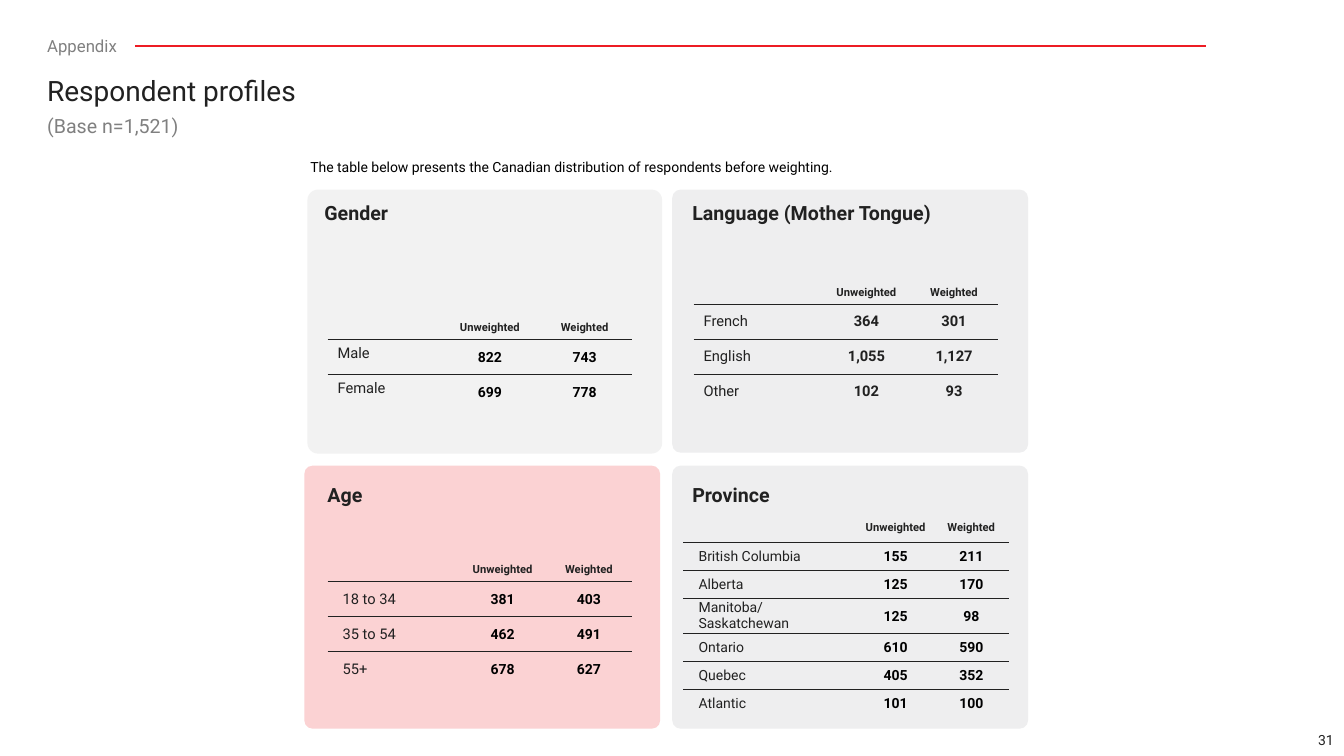
import pptx
import pptx.util
import pptx.dml.color
import pptx.enum.shapes
import pptx.enum.text
import pptx.oxml
import pptx.oxml.ns

Pt = pptx.util.Pt
Rgb = pptx.dml.color.RGBColor.from_string
Align = pptx.enum.text.PP_ALIGN
Anchor = pptx.enum.text.MSO_ANCHOR
Shape = pptx.enum.shapes.MSO_SHAPE


class Theme:
    font = "Roboto"
    ink, black, gray, white = "212121", "000000", "808080", "FFFFFF"
    red, pink, pale, mist = "ED1C24", "FBD2D3", "F2F2F2", "EEEEEF"
    title, head, tag, label, body, small = 20, 14, 12, 10.5, 10, 8


def write(frame, text, size=Theme.body, color=Theme.ink, bold=False,
          align=Align.LEFT, space=None):
    para = frame.paragraphs[0]
    para.alignment = align
    para.line_spacing = space
    run = para.add_run()
    run.text = text
    run.font.name = Theme.font
    run.font.size = Pt(size)
    run.font.bold = bold
    run.font.color.rgb = Rgb(color)


def edge(cell, side, drawn):
    fill = f'<a:solidFill><a:srgbClr val="{Theme.ink}"/></a:solidFill>' if drawn else "<a:noFill/>"
    space = pptx.oxml.ns.nsdecls("a")
    line = pptx.oxml.parse_xml(f'<a:{side} {space} w="{Pt(0.5)}">{fill}</a:{side}>')
    cell._tc.get_or_add_tcPr().append(line)


deck = pptx.Presentation()
deck.slide_width, deck.slide_height = Pt(960), Pt(540)
slide = deck.slides.add_slide(deck.slide_layouts[6])
shapes = slide.shapes

rule = shapes.add_connector(pptx.enum.shapes.MSO_CONNECTOR.STRAIGHT,
                            Pt(64.8), Pt(33.1), Pt(861.1), Pt(33.1))
rule.line.color.rgb = Rgb(Theme.red)
rule.line.width = Pt(1.5)
rule._element.spPr.append(pptx.oxml.parse_xml(f'<a:effectLst {pptx.oxml.ns.nsdecls("a")}/>'))

cards = [
    (219.6, 135.4, 253.4, 188.6, 0.04, Theme.pale),
    (480.2, 135.4, 254.2, 187.9, 0.032, Theme.mist),
    (217.4, 332.6, 254.2, 187.9, 0.032, Theme.pink),
    (480.2, 332.6, 254.2, 187.9, 0.032, Theme.mist),
]
for left, top, width, height, curve, color in cards:
    card = shapes.add_shape(Shape.ROUNDED_RECTANGLE, Pt(left), Pt(top), Pt(width), Pt(height))
    card.adjustments[0] = curve
    card.shadow.inherit = False
    card.fill.solid()
    card.fill.fore_color.rgb = Rgb(color)
    card.line.fill.background()

head = dict(size=Theme.head, bold=True)
labels = [
    ("Appendix", 26.6, 23.8, 69.8, 20.2, dict(size=Theme.tag, color=Theme.gray, space=0.9)),
    ("Respondent profiles", 26.6, 51.8, 688.3, 28.1, dict(size=Theme.title, space=0.9)),
    ("(Base n=1,521)", 26.6, 79.9, 453.6, 28.1, dict(size=Theme.head, color=Theme.gray, space=0.9)),
    ("Gender", 224.6, 139.7, 67.7, 24.5, head),
    ("Language (Mother Tongue)", 487.4, 139.7, 200.9, 24.5, head),
    ("Age", 226.8, 341.3, 92.9, 24.5, head),
    ("Province", 487.4, 341.3, 92.9, 24.5, head),
    ("The table below presents the Canadian distribution of respondents before weighting.",
     217.4, 110.9, 520.6, 15.8, dict(color=Theme.black, align=Align.JUSTIFY)),
    ("31", 870.5, 517, 89.3, 23, dict(align=Align.RIGHT)),
]
for text, left, top, width, height, style in labels:
    box = shapes.add_textbox(Pt(left), Pt(top), Pt(width), Pt(height))
    frame = box.text_frame
    frame.word_wrap = True
    if text == "Appendix":
        box.fill.solid()
        box.fill.fore_color.rgb = Rgb(Theme.white)
    if text == "31":
        frame.vertical_anchor = Anchor.MIDDLE
    if style.get("align") == Align.JUSTIFY:
        frame.margin_left = frame.margin_right = Pt(4.3)
        frame.margin_top = frame.margin_bottom = Pt(2.2)
    write(frame, text, **style)

wide = (7.2, 3.6, 7.2, 3.6)
tight = (0.7, 0.7, 0.7, 0)
inset = (10.8, 0.7, 5, 0.7)
none = (0, 0, 0, 0)
bold = dict(bold=True, align=Align.CENTER)
small = dict(bold, size=Theme.small)
name = dict(size=Theme.label)
count = dict(bold, color=Theme.black)
mid, low, high = Anchor.MIDDLE, Anchor.BOTTOM, Anchor.TOP

tables = [
    (234, 213.8, (82.1, 67.7), [25] * 2,
     (small, wide, low), (name, wide, high), (count, tight, mid),
     [("Male", "822", "743"), ("Female", "699", "778")]),
    (495.4, 188.6, (92.2, 62.6), [25] * 3,
     (small, wide, low), (name, wide, mid), (dict(bold, size=Theme.label), wide, mid),
     [("French", "364", "301"), ("English", "1,055", "1,127"), ("Other", "102", "93")]),
    (234, 386.6, (94.3, 61.6), [25] * 3,
     (small, wide, low), (name, inset, mid), (count, tight, mid),
     [("18 to 34", "381", "403"), ("35 to 54", "462", "491"), ("55+", "678", "627")]),
    (488.2, 365.8, (124.6, 54), [19.9, 19.9, 25, 19.9, 19.9, 19.9],
     (small, none, mid), ({}, inset, mid), (count, tight, mid),
     [("British Columbia", "155", "211"), ("Alberta", "125", "170"),
      ("Manitoba/Saskatchewan", "125", "98"), ("Ontario", "610", "590"),
      ("Quebec", "405", "352"), ("Atlantic", "101", "100")]),
]
for left, top, (first, other), heights, header, side, value, data in tables:
    rows = [("", "Unweighted", "Weighted")] + data
    widths = [first, other, other]
    heights = [19.5] + heights
    grid = shapes.add_table(len(rows), 3, Pt(left), Pt(top),
                            Pt(sum(widths)), Pt(sum(heights))).table
    grid.first_row = grid.horz_banding = False
    for col, width in zip(grid.columns, widths):
        col.width = Pt(width)
    for r, row in enumerate(rows):
        grid.rows[r].height = Pt(heights[r])
        for c, text in enumerate(row):
            cell = grid.cell(r, c)
            style, pad, anchor = header if r == 0 else value if c else side
            cell.margin_left, cell.margin_top, cell.margin_right, cell.margin_bottom = map(Pt, pad)
            cell.vertical_anchor = anchor
            edge(cell, "lnL", False)
            edge(cell, "lnR", False)
            edge(cell, "lnT", r > 0)
            edge(cell, "lnB", r < len(rows) - 1)
            cell.fill.background()
            write(cell.text_frame, text, **style)

deck.save("out.pptx")
